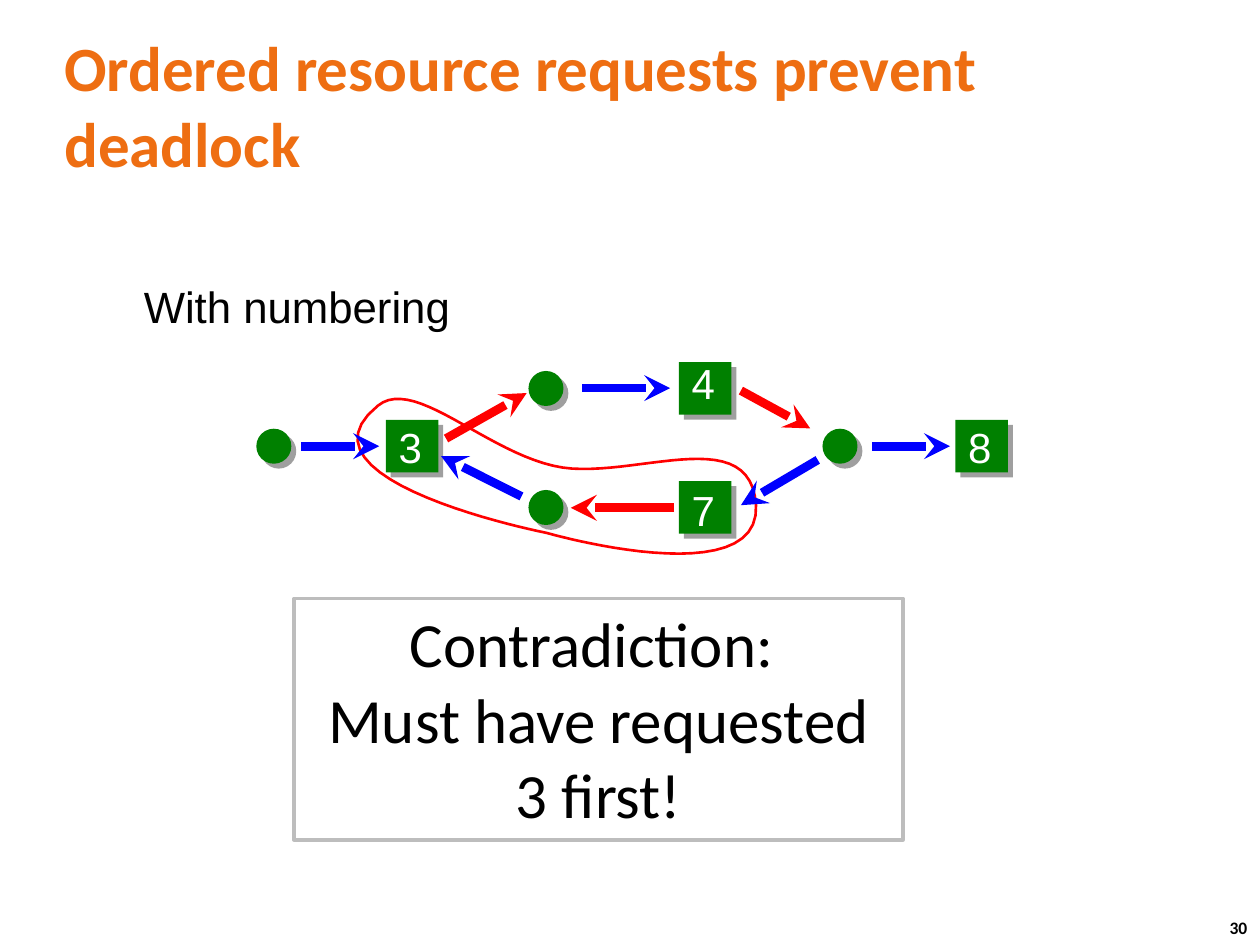
from lxml.etree import SubElement
from pptx import Presentation
from pptx.dml.color import RGBColor
from pptx.enum.shapes import MSO_CONNECTOR, MSO_SHAPE
from pptx.enum.text import MSO_ANCHOR, PP_ALIGN
from pptx.oxml.ns import qn
from pptx.util import Pt

COLORS = {
    "title": "EE6E12", "text": "000000", "paper": "FFFFFF", "node": "008000",
    "hold": "FF0000", "request": "0000FF", "frame": "BDBDBD", "shadow": "808080",
}
TITLE = "Ordered resource requests prevent deadlock"
BODY = "With numbering"
CONCLUSION = "Contradiction: \vMust have requested 3 first!"
PAGE_NUMBER = "30"

TOP, MIDDLE, BOTTOM = 222, 255, 290
PROCESS_SIZE, RESOURCE_SIZE = 20, 30
PROCESSES = [(156.5, MIDDLE), (312, TOP), (480, MIDDLE), (312, BOTTOM)]
# number, centre x, centre y, rise of the label above the centre
RESOURCES = [
    ("3", 235.5, MIDDLE, 14), ("4", 403, TOP, 18),
    ("7", 403, BOTTOM, 13), ("8", 561, MIDDLE, 14),
]
# kind, tail, tip
ARROWS = [
    ("hold", (254.9, 250.6), (301, 224.6)),
    ("hold", (423.4, 223.2), (463, 244.8)),
    ("hold", (385.2, 290.2), (326.2, 290.2)),
    ("request", (172, 255), (216.7, 255)),
    ("request", (498.2, 255), (542.9, 255)),
    ("request", (332.6, 221.8), (383, 221.8)),
    ("request", (467.3, 262.8), (423.4, 288.7)),
    ("request", (298, 283.7), (252, 260.6)),
]
CYCLE_START = (432, 288.7)
CYCLE_CURVES = [
    [(434.9, 339.8), (312.5, 304.6), (312.5, 304.6)],
    [(312.5, 304.6), (162, 275), (216, 231.8)],
    [(238.3, 213.8), (283.7, 265), (326.9, 267.8)],
    [(369.4, 270.7), (429.1, 243.4), CYCLE_START],
]
CURVE_STEPS = 24


def color(name):
    return RGBColor.from_string(COLORS[name])


def set_text(box, text, align=PP_ALIGN.LEFT, before=0, margins=(0, 0, 0, 0),
             wrap=True, anchor=MSO_ANCHOR.TOP, ink="text", **font):
    frame = box.text_frame
    frame.text = text
    frame.word_wrap = wrap
    frame.vertical_anchor = anchor
    sides = ("margin_left", "margin_top", "margin_right", "margin_bottom")
    for side, margin in zip(sides, margins):
        setattr(frame, side, Pt(margin))
    paragraph = frame.paragraphs[0]
    paragraph.alignment = align
    paragraph.space_before = Pt(before)
    for span in paragraph.runs:
        for key, value in font.items():
            setattr(span.font, key, value)
        span.font.color.rgb = color(ink)
    return paragraph


def place(box, left, top, width, height):
    box.left, box.top, box.width, box.height = map(Pt, (left, top, width, height))


def add_node(shapes, kind, x, y, size):
    node = shapes.add_shape(kind, Pt(x - size / 2), Pt(y - size / 2), Pt(size), Pt(size))
    node.fill.solid()
    node.fill.fore_color.rgb = color("node")
    node.line.fill.background()
    node.shadow.inherit = False
    effects = node._element.spPr.find(qn("a:effectLst"))
    shadow = SubElement(effects, qn("a:outerShdw"), dist=str(Pt(4)), dir="2700000",
                        algn="ctr", rotWithShape="0")
    tint = SubElement(shadow, qn("a:srgbClr"), val=COLORS["shadow"])
    SubElement(tint, qn("a:alpha"), val="75000")


def add_arrow(shapes, kind, tail, tip):
    arrow = shapes.add_connector(MSO_CONNECTOR.STRAIGHT, *map(Pt, tail + tip))
    arrow.line.color.rgb = color(kind)
    arrow.line.width = Pt(5)
    SubElement(arrow.line._get_or_add_ln(), qn("a:tailEnd"), type="stealth")
    SubElement(arrow._element.spPr, qn("a:effectLst"))


def curve_points(start, curves):
    """Yield points along a chain of cubic Bezier curves."""
    for first, second, end in curves:
        for step in range(1, CURVE_STEPS + 1):
            t = step / CURVE_STEPS
            weights = ((1 - t) ** 3, 3 * t * (1 - t) ** 2, 3 * t * t * (1 - t), t ** 3)
            controls = (start, first, second, end)
            yield tuple(Pt(sum(w * p[axis] for w, p in zip(weights, controls)))
                        for axis in (0, 1))
        start = end


def outline(shape, line, width):
    shape.shadow.inherit = False
    shape.fill.solid()
    shape.fill.fore_color.rgb = color("paper")
    shape.line.color.rgb = color(line)
    shape.line.width = Pt(width)


deck = Presentation()
deck.slide_width, deck.slide_height = Pt(720), Pt(540)
page = deck.slides.add_slide(deck.slide_layouts[1])
shapes = page.shapes

title, body = page.placeholders
place(title, 29.5, 29.5, 660, 60)
set_text(title, TITLE, margins=(7.2, 3.6, 10, 3.6), anchor=MSO_ANCHOR.MIDDLE,
         ink="title", name="Calibri", size=Pt(36), bold=True)
place(body, 75, 156, 603.5, 324)
item = set_text(body, BODY, before=18, margins=(7.2, 3.6, 10, 3.6),
                name="Arial", size=Pt(25))
properties = item._p.get_or_add_pPr()
properties.set("marL", "0")
properties.set("indent", "0")
SubElement(properties, qn("a:buNone"))

builder = shapes.build_freeform(*map(Pt, CYCLE_START))
builder.add_line_segments(list(curve_points(CYCLE_START, CYCLE_CURVES)), close=True)
outline(builder.convert_to_shape(), "hold", 1.5)

for x, y in PROCESSES:
    add_node(shapes, MSO_SHAPE.OVAL, x, y, PROCESS_SIZE)
for number, x, y, rise in RESOURCES:
    add_node(shapes, MSO_SHAPE.RECTANGLE, x, y, RESOURCE_SIZE)
for arrow in ARROWS:
    add_arrow(shapes, *arrow)
for number, x, y, rise in RESOURCES:
    label = shapes.add_textbox(Pt(x - 10.7), Pt(y - rise), Pt(25), Pt(35))
    set_text(label, number, margins=(3, 0, 3, 0), wrap=False, ink="paper",
             name="Arial", size=Pt(24))

conclusion = shapes.add_shape(MSO_SHAPE.RECTANGLE, Pt(168), Pt(342), Pt(348), Pt(138))
outline(conclusion, "frame", 2)
set_text(conclusion, CONCLUSION, align=PP_ALIGN.CENTER, margins=(7.2, 3.6, 7.2, 3.6),
         name="Calibri", size=Pt(36))

footer = shapes.add_textbox(Pt(695.5), Pt(520.5), Pt(26.5), Pt(19.5))
set_text(footer, PAGE_NUMBER, margins=(7.2, 3.6, 7.2, 3.6), wrap=False,
         name="Calibri", size=Pt(10), bold=True)

deck.save("out.pptx")
